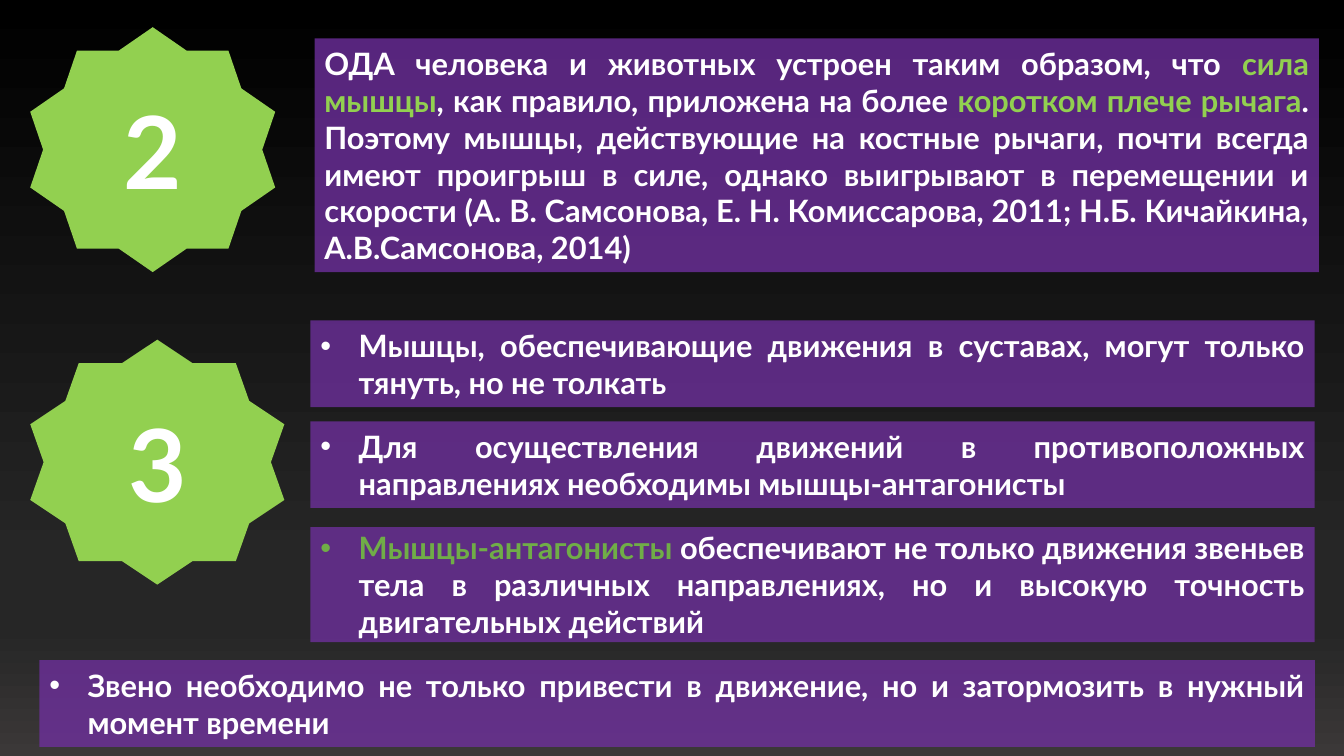
from dataclasses import dataclass

from lxml import etree
from pptx import Presentation
from pptx.dml.color import RGBColor
from pptx.enum.shapes import MSO_SHAPE
from pptx.enum.text import MSO_ANCHOR, PP_ALIGN
from pptx.oxml.ns import qn
from pptx.util import Inches, Pt

PANEL, STAR = MSO_SHAPE.FLOWCHART_PROCESS, MSO_SHAPE.STAR_10_POINT
MIDDLE = MSO_ANCHOR.MIDDLE
CENTER, JUSTIFY = PP_ALIGN.CENTER, PP_ALIGN.JUSTIFY
FONT = "Lato"
COLORS = {"white": "FFFFFF", "lime": "92D050", "green": "70AD47", "purple": "7030A0"}
BACKDROP = [(0, "000000"), (74, "262626"), (83, "262626"), (100, "3B3838")]
INDENT = Inches(0.38)
Run = tuple[str, str]


@dataclass
class Statement:
    box: tuple[float, float, float, float]
    runs: list[Run]
    opacity: int = 77
    bullet: bool = True


@dataclass
class Badge:
    box: tuple[float, float, float, float]
    number: str


BADGES = [Badge((0.3, 0.27, 2.43, 2.43), "2"), Badge((0.3, 3.37, 2.52, 2.43), "3")]
STATEMENTS = [
    Statement((3.12, 0.38, 9.96, 2.32), [
        ("ОДА человека и животных устроен таким образом, что ", "white"),
        ("сила мышцы", "lime"),
        (", как правило, приложена на более ", "white"),
        ("коротком плече рычага", "lime"),
        (". Поэтому мышцы, действующие на костные рычаги, почти всегда имеют "
         "проигрыш в силе, однако выигрывают в перемещении и скорости "
         "(А. В. Самсонова, Е. Н. Комиссарова, 2011; Н.Б. Кичайкина, "
         "А.В.Самсонова, 2014)", "white"),
    ], opacity=78, bullet=False),
    Statement((3.08, 3.18, 9.96, 0.86), [
        ("Мышцы, обеспечивающие движения в суставах, могут только тянуть, "
         "но не толкать", "white")]),
    Statement((3.08, 4.18, 9.96, 0.86), [
        ("Для осуществления движений в противоположных направлениях "
         "необходимы мышцы-антагонисты", "white")]),
    Statement((3.08, 5.23, 9.96, 1.14), [
        ("Мышцы-антагонисты", "green"),
        (" обеспечивают не только движения звеньев тела в различных "
         "направлениях, но и высокую точность двигательных действий", "white")]),
    Statement((0.39, 6.55, 12.65, 0.86), [
        ("Звено необходимо не только привести в движение, но и затормозить "
         "в нужный момент времени", "white")]),
]


def paint_background(slide) -> None:
    """Fill the slide with the vertical dark gradient."""
    fill = slide.background.fill
    fill.gradient()
    fill.gradient_angle = 270
    stops = next(slide.element.iter(qn("a:gsLst")))
    for stop in list(stops):
        stops.remove(stop)
    for percent, color in BACKDROP:
        stop = etree.SubElement(stops, qn("a:gs"), pos=str(percent * 1000))
        etree.SubElement(stop, qn("a:srgbClr"), val=color)


def add_figure(slide, kind, box, color: str, opacity: int = 100):
    """Add a borderless filled shape."""
    figure = slide.shapes.add_shape(kind, *map(Inches, box))
    figure.shadow.inherit = False
    figure.line.fill.background()
    figure.fill.solid()
    figure.fill.fore_color.rgb = RGBColor.from_string(COLORS[color])
    if opacity < 100:
        solid = figure.element.spPr.find(qn("a:solidFill"))
        etree.SubElement(solid[0], qn("a:alpha"), val=str(opacity * 1000))
    return figure


def write_text(figure, runs: list[Run], *, size: int, align, bullet: bool = False) -> None:
    """Write bold coloured runs as one paragraph."""
    frame = figure.text_frame
    frame.word_wrap = True
    frame.vertical_anchor = MIDDLE
    paragraph = frame.paragraphs[0]
    paragraph.alignment = align
    if bullet:
        properties = paragraph._p.get_or_add_pPr()
        properties.set("marL", str(INDENT))
        properties.set("indent", str(-INDENT))
        etree.SubElement(properties, qn("a:buFont"), typeface="Arial")
        etree.SubElement(properties, qn("a:buChar"), char="•")
    for text, color in runs:
        run = paragraph.add_run()
        run.text = text
        run.font.name = FONT
        run.font.size = Pt(size)
        run.font.bold = True
        run.font.color.rgb = RGBColor.from_string(COLORS[color])


def main() -> None:
    """Build and save the slide."""
    deck = Presentation()
    deck.slide_width, deck.slide_height = Inches(13.33), Inches(7.5)
    slide = deck.slides.add_slide(deck.slide_layouts[6])
    paint_background(slide)
    for statement in STATEMENTS:
        panel = add_figure(slide, PANEL, statement.box, "purple", statement.opacity)
        write_text(panel, statement.runs, size=22, align=JUSTIFY, bullet=statement.bullet)
    for badge in BADGES:
        star = add_figure(slide, STAR, badge.box, "lime")
        write_text(star, [(badge.number, "white")], size=72, align=CENTER)
    deck.save("out.pptx")


if __name__ == "__main__":
    main()
